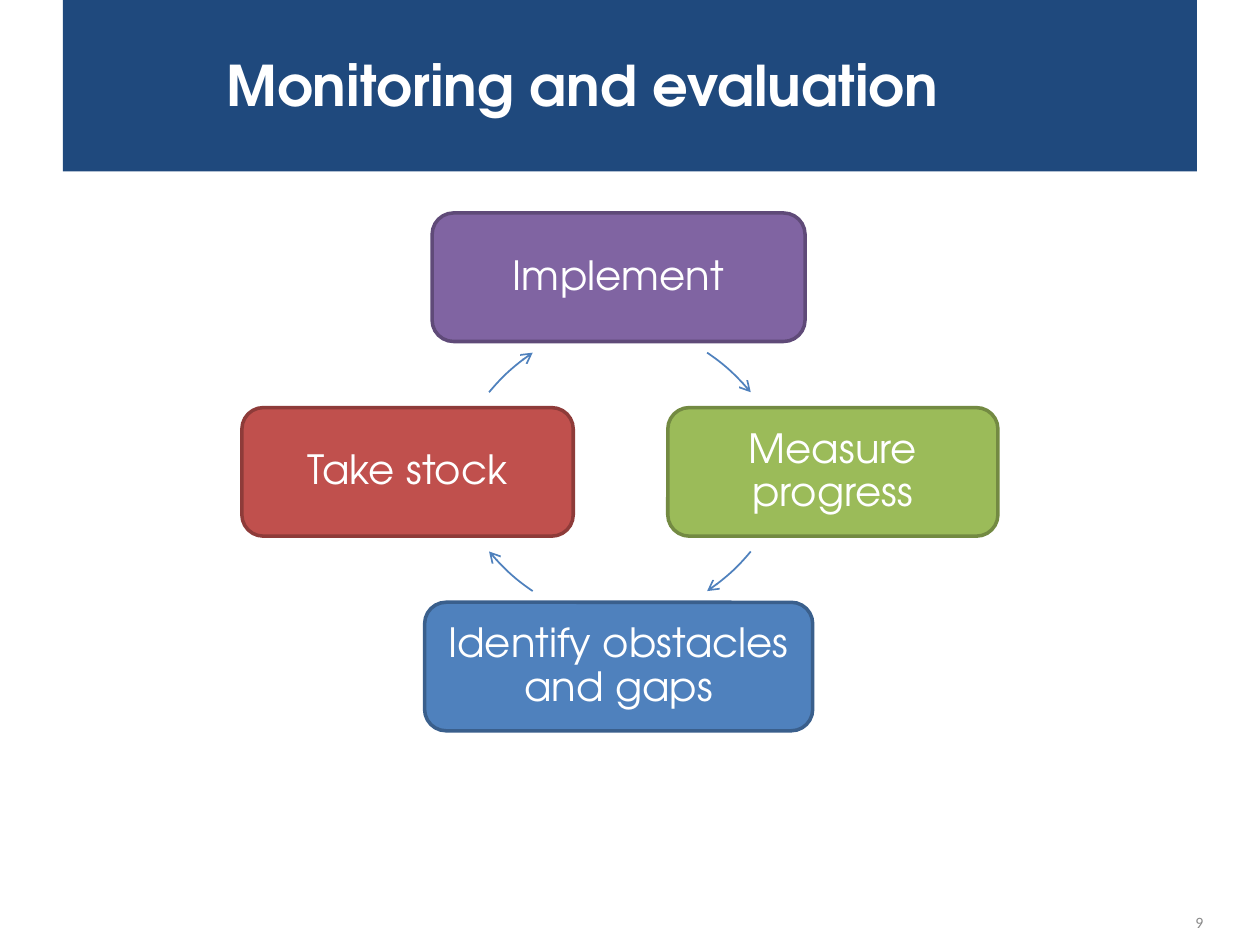
from lxml import etree
from pptx import Presentation
from pptx.dml.color import RGBColor
from pptx.enum import shapes, text
from pptx.oxml.ns import qn
from pptx.util import Inches, Pt

COLORS = {
    "banner": "1F497D", "white": "FFFFFF", "number": "898989", "arrow": "4F81BD",
    "purple": "8064A2", "purple_edge": "5F4A78",
    "green": "9BBB59", "green_edge": "738A42",
    "blue": "4F81BD", "blue_edge": "3A5F8C",
    "red": "C0504D", "red_edge": "8E3B39",
}
HEADING_FONT = "TeX Gyre Adventor"

# Label, colour, width, horizontal centre and row of each step, clockwise from the top
STEPS = [
    ("Implement", "purple", 2.96, 4.91, 0),
    ("Measure progress", "green", 2.62, 6.61, 1),
    ("Identify obstacles and gaps", "blue", 3.08, 4.91, 2),
    ("Take stock", "red", 2.63, 3.235, 1),
]
STEP_HEIGHT = 1.02

# Start and end angle of each arrow, with the side its circle's centre is shifted to
ARROWS = [
    (304.3, 320.2, -1, 1),
    (39.8, 55.7, -1, -1),
    (124.3, 140.2, 1, -1),
    (219.8, 235.7, 1, 1),
]
ARROW_RADIUS = 1.69
SHIFT_X, SHIFT_Y = 0.26, 0.45


def color(name):
    return RGBColor.from_string(COLORS[name])


def add_block(slide, kind, box, fill=None, line=None, line_width=1):
    shape = slide.shapes.add_shape(kind, *map(Inches, box))
    shape.shadow.inherit = False
    if fill:
        shape.fill.solid()
        shape.fill.fore_color.rgb = color(fill)
    else:
        shape.fill.background()
    if line:
        shape.line.color.rgb = color(line)
        shape.line.width = Pt(line_width)
    else:
        shape.line.fill.background()
    return shape


def write(shape, words, size, font, ink, align, insets, bold=False):
    frame = shape.text_frame
    frame.word_wrap = True
    frame.vertical_anchor = text.MSO_ANCHOR.MIDDLE
    (frame.margin_left, frame.margin_top,
     frame.margin_right, frame.margin_bottom) = map(Inches, insets)
    paragraph = frame.paragraphs[0]
    paragraph.text = words
    paragraph.alignment = align
    paragraph.font.size = Pt(size)
    paragraph.font.name = font
    paragraph.font.bold = bold
    paragraph.font.color.rgb = color(ink)
    return paragraph


def add_banner(slide, box):
    banner = add_block(slide, shapes.MSO_SHAPE.RECTANGLE, box, "banner")
    write(banner, "Monitoring and evaluation", 32, HEADING_FONT, "white",
          text.PP_ALIGN.LEFT, (1.3, 0.05, 0.3, 0.05), bold=True)


def add_cycle(slide, box):
    left, top, width, height = box
    row_pitch = (height - STEP_HEIGHT) / 2

    # Steps
    for label, fill, step_width, center, row in STEPS:
        step_box = (center - step_width / 2, top + row * row_pitch,
                    step_width, STEP_HEIGHT)
        step = add_block(slide, shapes.MSO_SHAPE.ROUNDED_RECTANGLE, step_box,
                         fill, fill + "_edge", 2)
        paragraph = write(step, label, 23, HEADING_FONT, "white",
                          text.PP_ALIGN.CENTER, (0.1,) * 4)
        paragraph.line_spacing = 0.9

    # Curved arrows between the steps
    for start, end, side_x, side_y in ARROWS:
        arc_box = (left + width / 2 + side_x * SHIFT_X - ARROW_RADIUS,
                   top + height / 2 + side_y * SHIFT_Y - ARROW_RADIUS,
                   2 * ARROW_RADIUS, 2 * ARROW_RADIUS)
        arc = add_block(slide, shapes.MSO_SHAPE.ARC, arc_box, line="arrow")
        # Angles are stored in 1/60000 degree, adjustments in 1/100000
        arc.adjustments[0] = start * 0.6
        arc.adjustments[1] = end * 0.6
        outline = arc.line._get_or_add_ln()
        etree.SubElement(outline, qn("a:tailEnd"), type="arrow")


def add_page_number(slide, box):
    number = slide.shapes.add_textbox(*map(Inches, box))
    write(number, "9", 9, "Calibri", "number", text.PP_ALIGN.RIGHT,
          (0.07, 0.04, 0.07, 0.04))


def main():
    presentation = Presentation()
    presentation.slide_width = Inches(10)
    presentation.slide_height = Inches(7.5)
    slide = presentation.slides.add_slide(presentation.slide_layouts[6])
    add_page_number(slide, (7.29, 7.12, 2.33, 0.4))
    add_banner(slide, (0.5, -0.03, 9, 1.39))
    add_cycle(slide, (1.92, 1.69, 6, 4.11))
    presentation.save("out.pptx")


if __name__ == "__main__":
    main()
